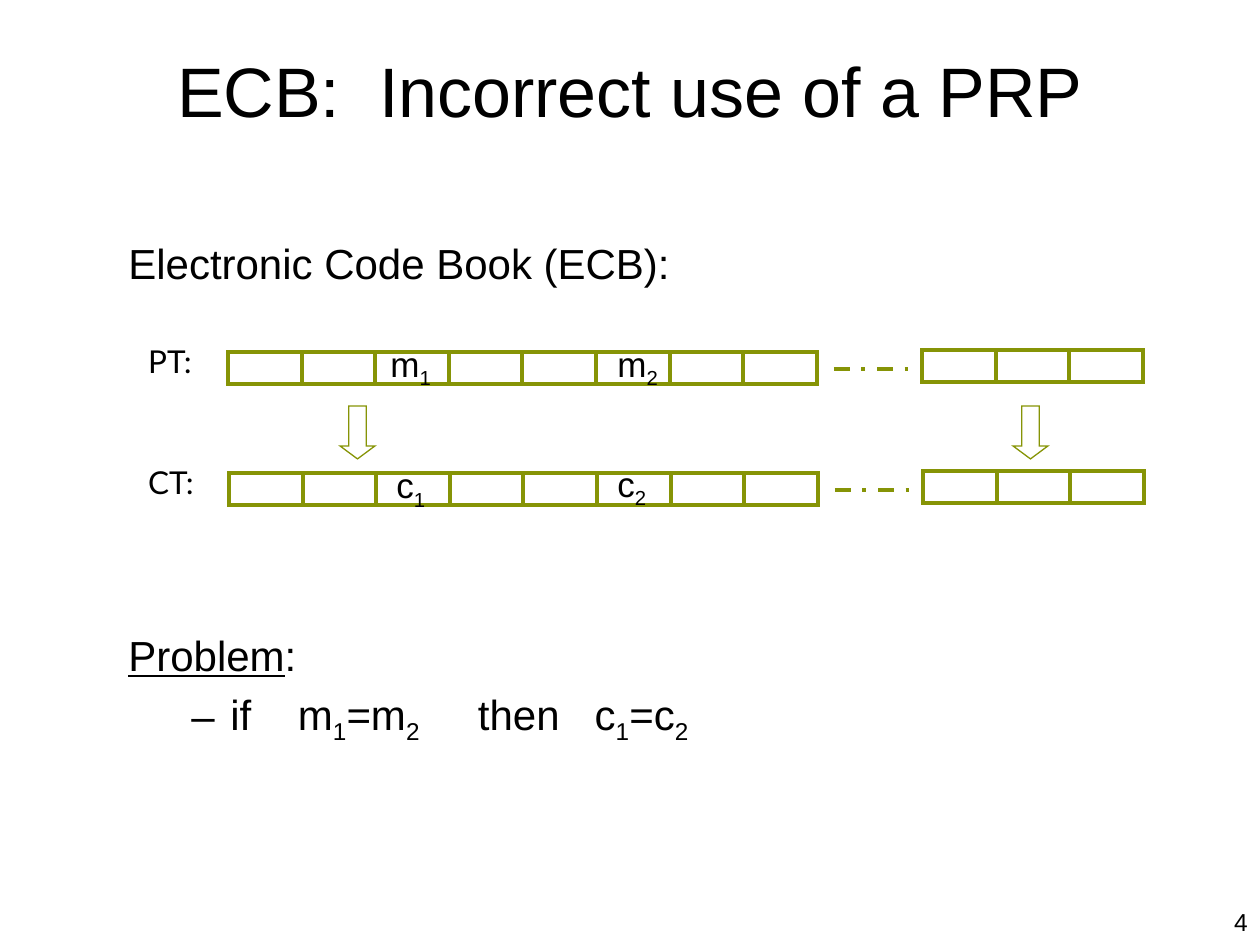
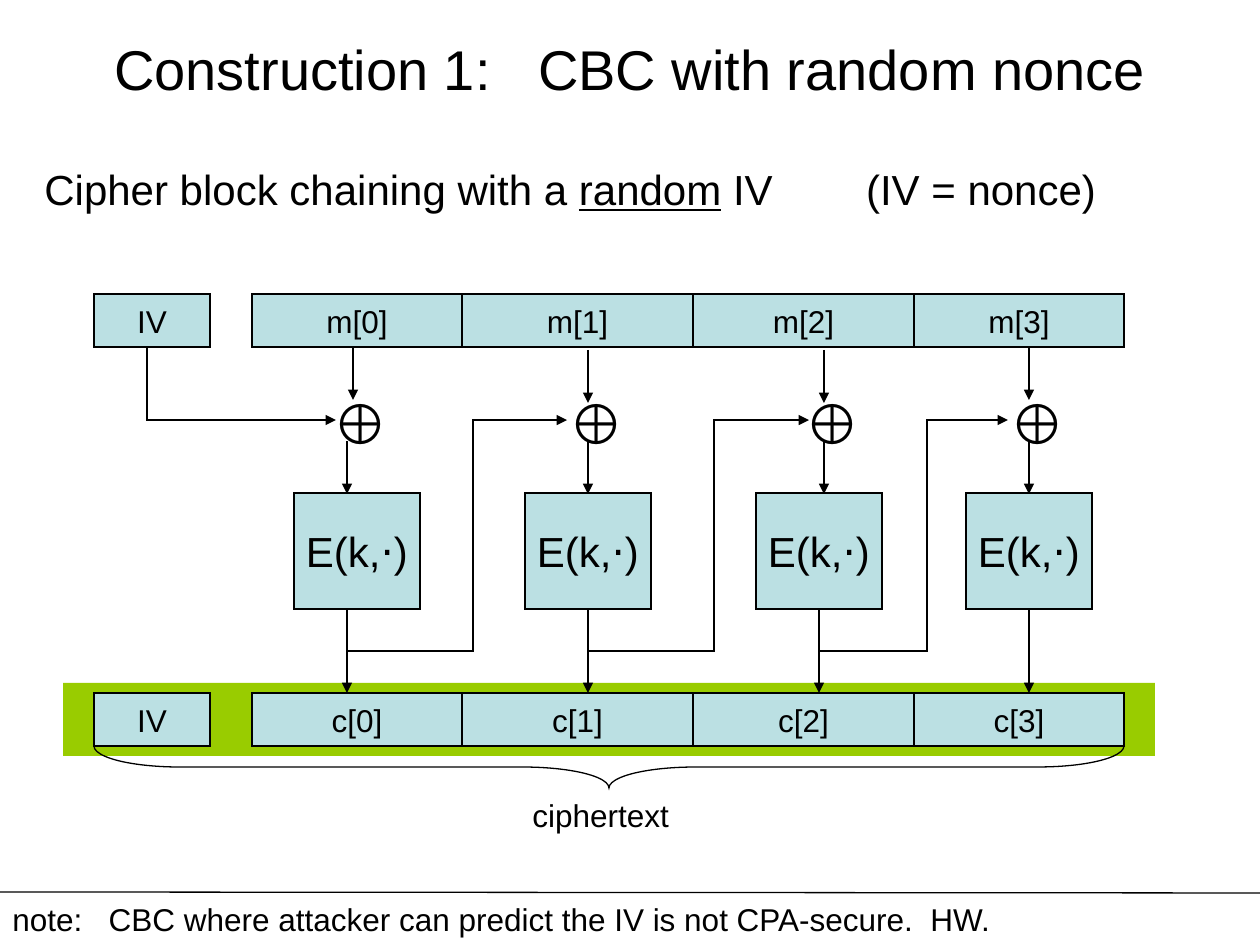
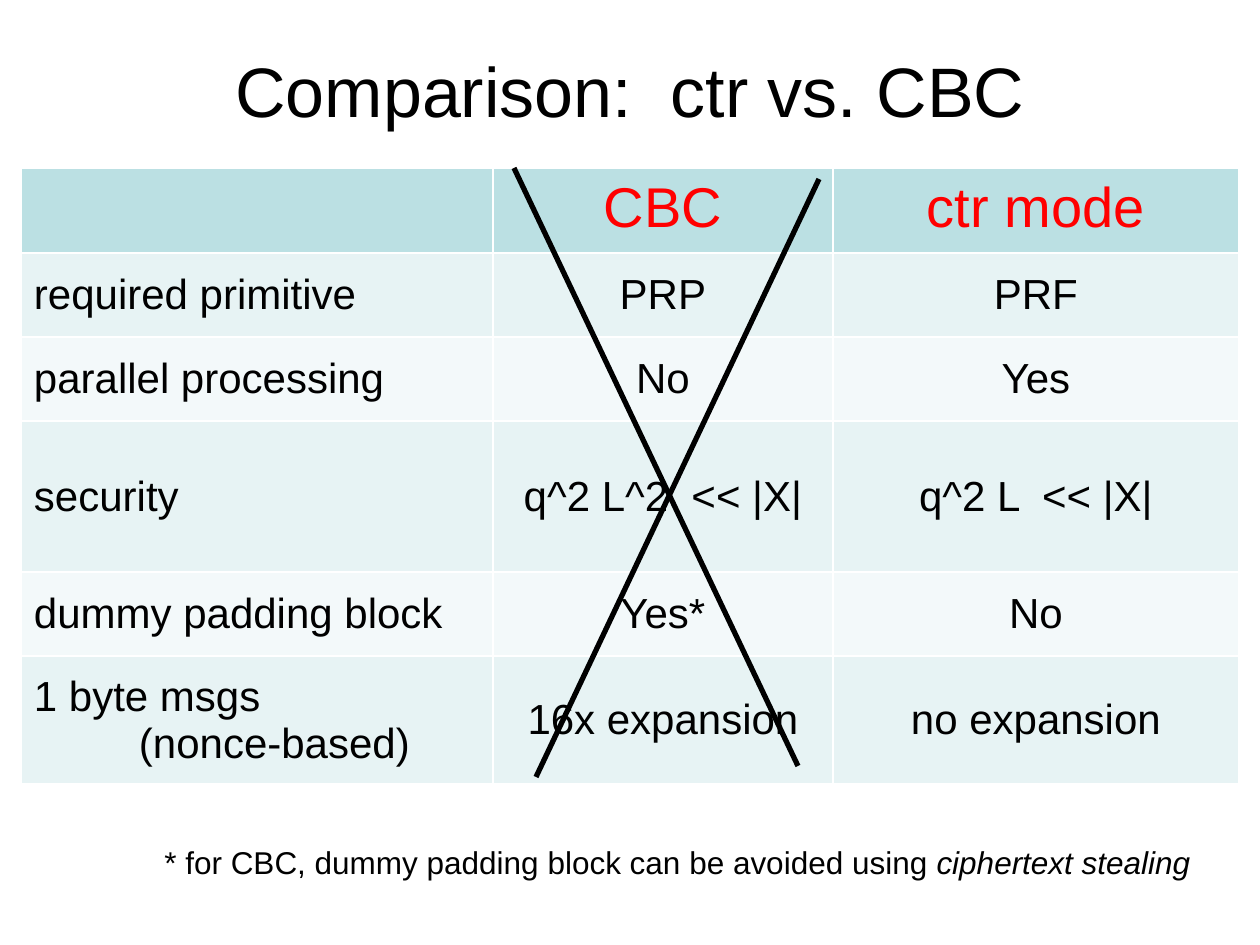
from itertools import pairwise

from lxml import etree
from pptx import Presentation
from pptx.dml.color import RGBColor
from pptx.enum import dml, shapes, text
from pptx.oxml import ns
from pptx.util import Emu, Pt

SCALE = 914400 / 126
BLACK = RGBColor(0x00, 0x00, 0x00)
WHITE = RGBColor(0xFF, 0xFF, 0xFF)
RED = RGBColor(0xFF, 0x00, 0x00)
OLIVE = RGBColor(0x86, 0x94, 0x06)
LIME = RGBColor(0x99, 0xCC, 0x00)
AQUA = RGBColor(0xBB, 0xE0, 0xE3)
AQUA_LIGHT = RGBColor(0xE7, 0xF3, 0xF4)
AQUA_PALE = RGBColor(0xF3, 0xF9, 0xFA)
LEFT, CENTER, RIGHT = text.PP_ALIGN.LEFT, text.PP_ALIGN.CENTER, text.PP_ALIGN.RIGHT
TOP, MIDDLE = text.MSO_ANCHOR.TOP, text.MSO_ANCHOR.MIDDLE
RECT = shapes.MSO_SHAPE.RECTANGLE
SUB = {"baseline": "-25000"}
UNDERLINE = {"underline": True}


def px(*values):
    return [Emu(round(v * SCALE)) for v in values]


def gap(spaces, size):
    return " ", {"spc": str(round((spaces - 1) * size * 27.8))}


def add_runs(p, runs, size, align=LEFT, font="Arial", color=BLACK):
    p.alignment = align
    for run in [runs] if isinstance(runs, str) else runs:
        words, extra = (run, {}) if isinstance(run, str) else run
        r = p.add_run()
        r.text = words
        r.font.color.rgb = color
        for key, value in {"name": font, "size": Pt(size), **extra}.items():
            if key in ("baseline", "spc"):
                r._r.get_or_add_rPr().set(key, value)
            else:
                setattr(r.font, key, value)


def add_text(s, box, runs, size, anchor=TOP, wrap=True, **style):
    tf = s.shapes.add_textbox(*px(*box)).text_frame
    tf.word_wrap, tf.vertical_anchor = wrap, anchor
    add_runs(tf.paragraphs[0], runs, size, **style)
    return tf


def add_title(s, runs, y=32, size=40):
    add_text(s, (63, y, 1134, 116), runs, size, MIDDLE, align=CENTER)


def outline(sp, color, width, arrow=False, dash=None):
    for key, value in {"width": Pt(width), "dash_style": dash}.items():
        setattr(sp.line, key, value)
    sp.line.color.rgb = color
    ln = sp._element.spPr.find(ns.qn("a:ln"))
    etree.SubElement(ln, ns.qn("a:miter")).set("lim", "800000")
    if arrow:
        etree.SubElement(ln, ns.qn("a:tailEnd")).set("type", "triangle")


def add_shape(s, kind, box, fill=None, line=None, width=0.75, adjust=()):
    sp = s.shapes.add_shape(kind, *px(*box))
    sp.shadow.inherit = False
    for i, value in enumerate(adjust):
        sp.adjustments[i] = value
    if fill is None:
        sp.fill.background()
    else:
        sp.fill.solid()
        sp.fill.fore_color.rgb = fill
    if line is None:
        sp.line.fill.background()
    else:
        outline(sp, line, width)
    return sp


def add_line(s, start, end, color=BLACK, width=0.75, **style):
    sp = s.shapes.add_connector(shapes.MSO_CONNECTOR.STRAIGHT, *px(*start, *end))
    outline(sp, color, width, **style)
    etree.SubElement(sp._element.spPr, ns.qn("a:effectLst"))


def add_path(s, points, width=0.75):
    builder = s.shapes.build_freeform(*points[0], scale=SCALE)
    builder.add_line_segments(points[1:], close=False)
    sp = builder.convert_to_shape()
    sp.shadow.inherit = False
    sp.fill.background()
    outline(sp, BLACK, width, arrow=True)


def add_block(s, box, words, size=18):
    tf = add_shape(s, RECT, box, AQUA, BLACK).text_frame
    tf.word_wrap, tf.vertical_anchor = False, MIDDLE
    add_runs(tf.paragraphs[0], words, size, CENTER)


def add_strip(s, x, y, w, count):
    for i in range(count):
        add_shape(s, RECT, (x + i * w / count, y, w / count, 32), line=OLIVE, width=2.25)


def add_message(s, x, y, name, letter, labels):
    add_text(s, (x, y, 88, 63), name, 18, wrap=False, align=CENTER, font="Lato")
    add_strip(s, x + 102, y + 16, 589, 8)
    add_strip(s, x + 796, y + 14, 221, 3)
    add_line(s, (x + 708, y + 33), (x + 782, y + 33), OLIVE, 2.25,
             dash=dml.MSO_LINE.DASH_DOT)
    for index, (dx, dy) in enumerate(labels, 1):
        add_text(s, (x + dx, y + dy, 68, 55), [letter, (str(index), SUB)], 20)


def add_problem(s, x, y):
    tf = add_text(s, (x, y, 1144, 130), [("Problem", UNDERLINE), ":"], 24)
    p = tf.add_paragraph()
    p.space_before = Pt(4.8)
    pPr = p._p.get_or_add_pPr()
    margin, hang = px(102, -39)
    pPr.set("marL", str(margin))
    pPr.set("indent", str(hang))
    etree.SubElement(pPr, ns.qn("a:buFont")).set("typeface", "Arial")
    etree.SubElement(pPr, ns.qn("a:buChar")).set("char", "–")
    one, two = ("1", SUB), ("2", SUB)
    add_runs(p, ["if", gap(4, 24), "m", one, "=m", two, gap(5, 24), "then",
                 gap(3, 24), "c", one, "=c", two], 24)


def ecb_slide(s):
    add_text(s, (966, 901, 294, 55), "4", 14, align=RIGHT)
    add_title(s, "ECB:  Incorrect use of a PRP")
    add_text(s, (116, 231, 1144, 60), "Electronic Code Book (ECB):", 24)
    for x in (340, 1013):
        add_shape(s, shapes.MSO_SHAPE.DOWN_ARROW, (x, 406, 35, 53), line=OLIVE,
                  adjust=(0.5, 0.37))
    add_message(s, 126, 336, "PT:", "m", [(252, 0), (479, 0)])
    add_message(s, 127, 457, "CT:", "c", [(257, 0), (478, -1)])
    add_problem(s, 116, 623)


def add_block_row(s, x, y, letter):
    add_block(s, (x, y, 116, 53), "IV")
    edges = [158, 368, 599, 820, 1030]
    for i, (left, right) in enumerate(pairwise(edges)):
        add_block(s, (x + left, y, right - left, 53), f"{letter}[{i}]")


def add_stage(s, x, y, enter_x, enter_y, xor_x, mid_x, out_x):
    add_block(s, (x, y + 146, 126, 116), "E(k,⋅)", 24)
    add_text(s, (xor_x, y + 35, 68, 79), "⊕", 32, wrap=False)
    for arrow_x, start, end in ((enter_x, enter_y, enter_y + 53),
                                (mid_x, 94, 147), (out_x, 262, 346)):
        add_line(s, (arrow_x, y + start), (arrow_x, y + end), arrow=True)


def add_chain(s, y):
    for stage in ((294, 353, 0, 320, 347, 347), (525, 588, 3, 556, 588, 588),
                  (756, 824, 3, 792, 824, 819), (966, 1029, 0, 997, 1029, 1029)):
        x, *rest = stage
        add_stage(s, x, y, *rest)
    add_path(s, [(147, y), (147, y + 73), (336, y + 73)], 1)
    for start, turn, end in ((347, 473, 567), (588, 714, 809), (819, 927, 1008)):
        add_path(s, [(start, y + 304), (turn, y + 304), (turn, y + 73), (end, y + 73)])


def cbc_slide(s):
    add_shape(s, RECT, (63, 683, 1092, 73), LIME)
    add_title(s, ["Construction 1:", gap(3, 32), "CBC with random nonce"], 10, 32)
    add_text(s, (32, 157, 1207, 60), ["Cipher block chaining with a ", ("random", UNDERLINE),
             " IV", gap(8, 24), "(IV = nonce)"], 24)
    add_block_row(s, 94, 294, "m")
    add_chain(s, 347)
    add_block_row(s, 94, 693, "c")
    brace = add_shape(s, shapes.MSO_SHAPE.LEFT_BRACE, (588, 252, 42, 1030), line=BLACK,
                      adjust=(2.04, 0.5))
    brace.rotation = 270
    add_text(s, (520, 790, 180, 50), "ciphertext", 18)
    add_text(s, (0, 894, 1013, 50), ["note:", gap(3, 18), "CBC where attacker can predict "
             "the IV is not CPA-secure.  HW."], 18)
    add_line(s, (0, 892), (1260, 893))


def format_cell(cell, fill):
    tcPr = cell._tc.get_or_add_tcPr()
    for side in ("lnL", "lnR", "lnT", "lnB"):
        ln = etree.SubElement(tcPr, ns.qn(f"a:{side}"), w=str(Pt(1)))
        color = etree.SubElement(ln, ns.qn("a:solidFill"))
        etree.SubElement(color, ns.qn("a:srgbClr"), val=str(WHITE))
    cell.fill.solid()
    cell.fill.fore_color.rgb = fill
    cell.margin_left, cell.margin_right, cell.margin_top, cell.margin_bottom = px(13, 13, 9, 9)


def add_comparison(s, x, y):
    rows = [
        ("", "CBC", "ctr mode"),
        ("required primitive", "PRP", "PRF"),
        ("parallel processing", "No", "Yes"),
        ("security", "q^2 L^2  << |X|", "q^2 L  << |X|"),
        ("dummy padding block", "Yes*", "No"),
        ("1 byte msgs", "16x expansion", "no expansion"),
    ]
    widths, heights = (472, 340, 406), (84, 84, 84, 151, 84, 128)
    frame = s.shapes.add_table(6, 3, *px(x, y, sum(widths), sum(heights)))
    table = frame.table
    table.first_row = table.horz_banding = False
    for column, width in zip(table.columns, px(*widths)):
        column.width = width
    for i, (row, height) in enumerate(zip(rows, px(*heights))):
        table.rows[i].height = height
        fill = AQUA if i == 0 else (AQUA_PALE, AQUA_LIGHT)[i % 2]
        for j, words in enumerate(row):
            cell = table.cell(i, j)
            format_cell(cell, fill)
            cell.vertical_anchor = MIDDLE if i else TOP
            if words:
                add_runs(cell.text_frame.paragraphs[0], words, 24 if i else 32,
                         CENTER if j else LEFT, color=BLACK if i else RED)
    p = table.cell(5, 0).text_frame.add_paragraph()
    add_runs(p, "(nonce-based)", 24)
    p._p.get_or_add_pPr().set("marL", str(px(105)[0]))


def comparison_slide(s):
    add_title(s, "Comparison:  ctr vs. CBC")
    add_comparison(s, 21, 168)
    add_text(s, (152, 837, 1071, 50), ["* for CBC, dummy padding block can be avoided using ",
             ("ciphertext stealing", {"italic": True})], 18)
    add_line(s, (514, 168), (798, 766), width=3)
    add_line(s, (819, 179), (536, 777), width=3)


def main():
    prs = Presentation()
    prs.slide_width, prs.slide_height = px(1260, 945)
    for build in (ecb_slide, cbc_slide, comparison_slide):
        build(prs.slides.add_slide(prs.slide_layouts[6]))
    prs.save("out.pptx")


if __name__ == "__main__":
    main()
